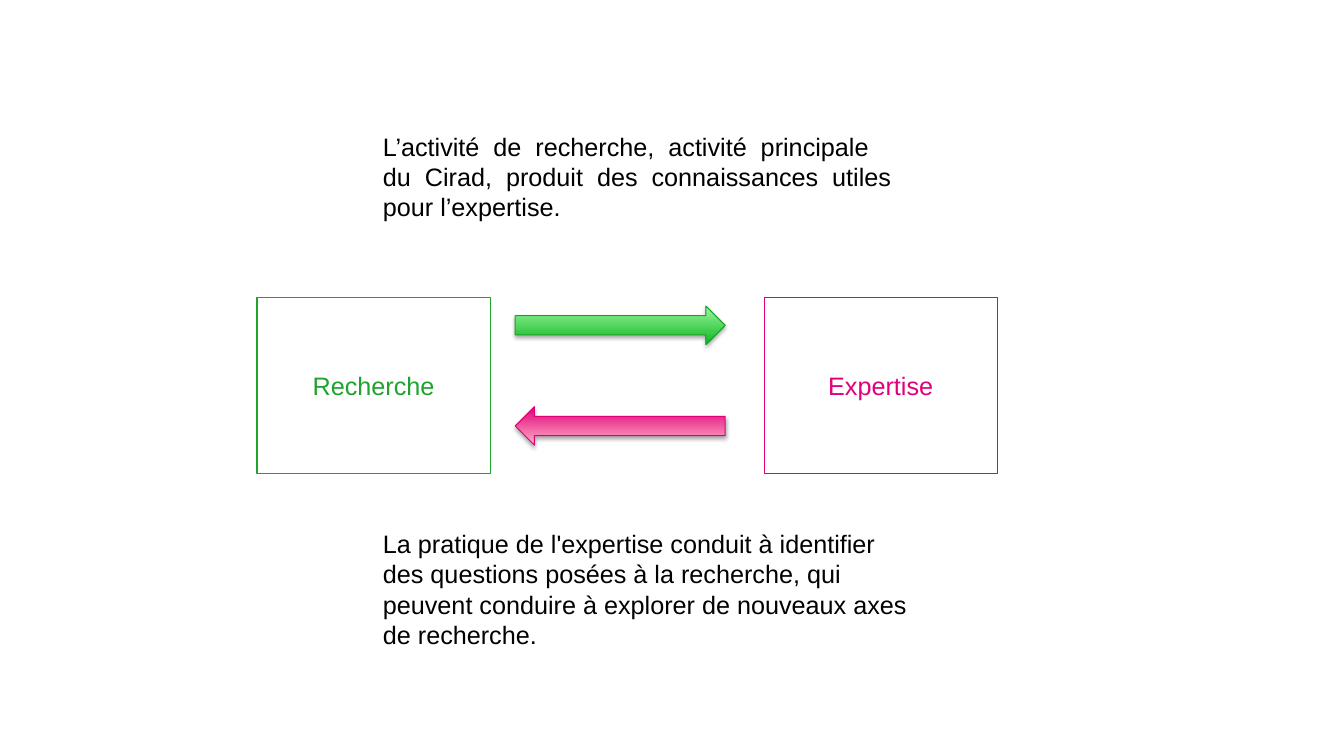
"""Builds a slide on the exchange between research and expertise."""
import pptx
import pptx.util
import pptx.dml.color
import pptx.enum.shapes
import pptx.enum.text
import pptx.oxml

Pt = pptx.util.Pt
KINDS = pptx.enum.shapes.MSO_SHAPE
TEXT = pptx.enum.text
COLORS = {
    "black": "000000",
    "green": "1FA22E", "green edge": "1BA22B",
    "green dark": "0BB61F", "green light": "9DF7A0",
    "pink": "E2007A", "pink edge": "DD0077",
    "pink dark": "E2007A", "pink light": "FFAFC5",
}
SHADOW = (
    '<a:effectLst xmlns:a="http://schemas.openxmlformats.org/drawingml/2006/main">'
    '<a:outerShdw blurRad="39370" dist="22860" dir="5400000" rotWithShape="0">'
    '<a:srgbClr val="000000"><a:alpha val="35000"/></a:srgbClr>'
    '</a:outerShdw></a:effectLst>'
)


def color(name):
    return pptx.dml.color.RGBColor.from_string(COLORS[name])


def write(shape, words, tint):
    run = shape.text_frame.paragraphs[0].add_run()
    run.text = words
    run.font.name = "Arial"
    run.font.size = Pt(18)
    run.font.color.rgb = color(tint)


def add_note(slide, top, height, words):
    note = slide.shapes.add_textbox(Pt(266.4), Pt(top), Pt(389.5), Pt(height))
    note.text_frame.word_wrap = True
    note.text_frame.auto_size = TEXT.MSO_AUTO_SIZE.SHAPE_TO_FIT_TEXT
    write(note, words, "black")


def add_shape(slide, kind, left, top, width, height, edge):
    shape = slide.shapes.add_shape(kind, Pt(left), Pt(top), Pt(width), Pt(height))
    shape.shadow.inherit = False
    shape.line.color.rgb = color(edge)
    shape.line.width = Pt(0.75)
    return shape


def add_box(slide, left, words, tint):
    box = add_shape(slide, KINDS.RECTANGLE, left, 212.4, 166.5, 126, tint)
    box.fill.background()
    box.text_frame.vertical_anchor = TEXT.MSO_ANCHOR.MIDDLE
    box.text_frame.paragraphs[0].alignment = TEXT.PP_ALIGN.CENTER
    write(box, words, tint)


def add_arrow(slide, top, tint, turn):
    arrow = add_shape(slide, KINDS.RIGHT_ARROW, 368, top, 150, 27.5, tint + " edge")
    arrow.rotation = turn
    arrow.fill.gradient()
    arrow.fill.gradient_angle = 90
    for stop, shade in zip(arrow.fill.gradient_stops, ("dark", "light")):
        stop.color.rgb = color(f"{tint} {shade}")
    props = arrow.element.spPr
    props.replace(props.effectLst, pptx.oxml.parse_xml(SHADOW))


def main():
    deck = pptx.Presentation()
    deck.slide_width, deck.slide_height = Pt(960), Pt(540)
    slide = deck.slides.add_slide(deck.slide_layouts[6])
    add_note(slide, 90, 72.7,
             "L’activité  de  recherche,  activité  principale  du  Cirad,  "
             "produit  des  connaissances  utiles pour l’expertise.")
    add_box(slide, 183.6, "Recherche", "green")
    add_box(slide, 545.8, "Expertise", "pink")
    add_arrow(slide, 218.7, "green", 0)
    add_arrow(slide, 290.5, "pink", 180)
    add_note(slide, 373.9, 94.5,
             "La pratique de l'expertise conduit à identifier des questions "
             "posées à la recherche, qui peuvent conduire à explorer de "
             "nouveaux axes de recherche.")
    deck.save("out.pptx")


if __name__ == "__main__":
    main()
